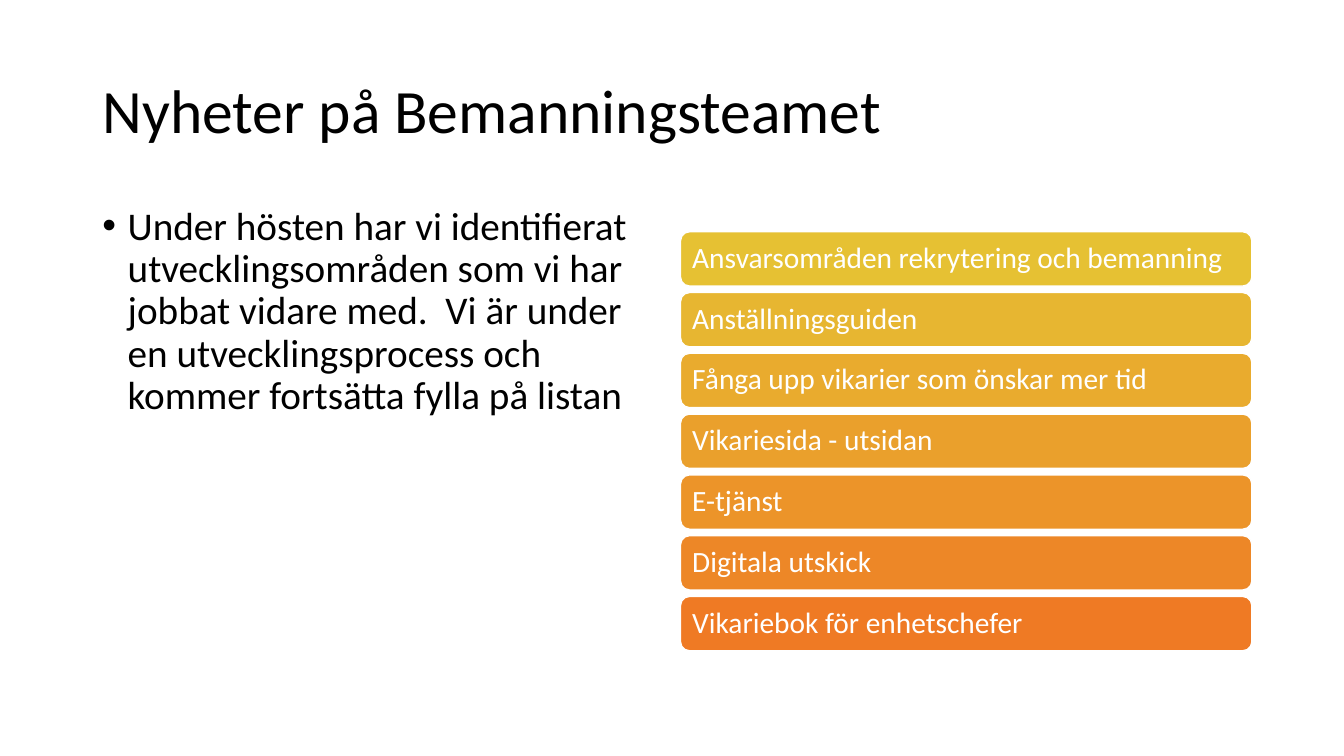
from lxml.etree import SubElement
from pptx import Presentation
from pptx.dml.color import RGBColor
from pptx.enum.shapes import MSO_SHAPE as SHAPE
from pptx.enum.text import MSO_ANCHOR as ANCHOR, PP_ALIGN as ALIGN
from pptx.oxml.ns import qn
from pptx.util import Cm, Pt

NEWS = [
    ("Ansvarsområden rekrytering och bemanning", "E6C133"),
    ("Anställningsguiden", "E7B631"),
    ("Fånga upp vikarier som önskar mer tid", "E9AB2E"),
    ("Vikariesida - utsidan", "EAA02C"),
    ("E-tjänst", "EC9429"),
    ("Digitala utskick", "ED8727"),
    ("Vikariebok för enhetschefer", "EF7A24"),
]
INTRO = ("Under hösten har vi identifierat utvecklingsområden som vi har "
         "jobbat vidare med.  Vi är under en utvecklingsprocess och "
         "kommer fortsätta fylla på listan")


def rgb(color):
    return RGBColor.from_string(color)


def format_text(tf, size, color, anchor):
    tf.word_wrap = True
    tf.vertical_anchor = anchor
    p = tf.paragraphs[0]
    p.alignment = ALIGN.LEFT
    p.line_spacing = 0.9
    for r in p.runs:
        r.font.name = "Calibri"
        r.font.size = Pt(size)
        r.font.color.rgb = rgb(color)


def add_title(s, left, top, width, height):
    sp = s.shapes.title
    sp.left, sp.top, sp.width, sp.height = map(Cm, (left, top, width, height))
    sp.text_frame.text = "Nyheter på Bemanningsteamet"
    format_text(sp.text_frame, 44, "000000", ANCHOR.MIDDLE)


def add_intro(s, left, top, width, height):
    tf = s.shapes.add_textbox(*map(Cm, (left, top, width, height))).text_frame
    tf.text = INTRO
    format_text(tf, 28, "000000", ANCHOR.TOP)
    pPr = tf.paragraphs[0]._p.get_or_add_pPr()
    pPr.set("marL", str(Cm(0.64)))
    pPr.set("indent", str(Cm(-0.64)))
    SubElement(pPr, qn("a:buFont")).set("typeface", "Arial")
    SubElement(pPr, qn("a:buChar")).set("char", "•")


def add_news(s, left, top, width, height):
    bar = 1.37
    pitch = (height - bar) / (len(NEWS) - 1)
    for i, (text, color) in enumerate(NEWS):
        sp = s.shapes.add_shape(SHAPE.ROUNDED_RECTANGLE, Cm(left),
                                Cm(top + i * pitch), Cm(width), Cm(bar))
        sp.shadow.inherit = False
        sp.fill.solid()
        sp.fill.fore_color.rgb = rgb(color)
        sp.line.color.rgb = rgb("FFFFFF")
        sp.line.width = Pt(1)
        tf = sp.text_frame
        tf.text = text
        tf.margin_left = tf.margin_right = Cm(0.23)
        tf.margin_top = tf.margin_bottom = Cm(0.23)
        format_text(tf, 21, "FFFFFF", ANCHOR.MIDDLE)


def main():
    prs = Presentation()
    prs.slide_width, prs.slide_height = Cm(33.87), Cm(19.05)
    s = prs.slides.add_slide(prs.slide_layouts[5])
    add_title(s, 2.33, 1.01, 29.21, 3.68)
    add_intro(s, 2.33, 5.07, 14.4, 12.09)
    add_news(s, 17.15, 5.84, 14.4, 10.56)
    prs.save("out.pptx")


if __name__ == "__main__":
    main()
